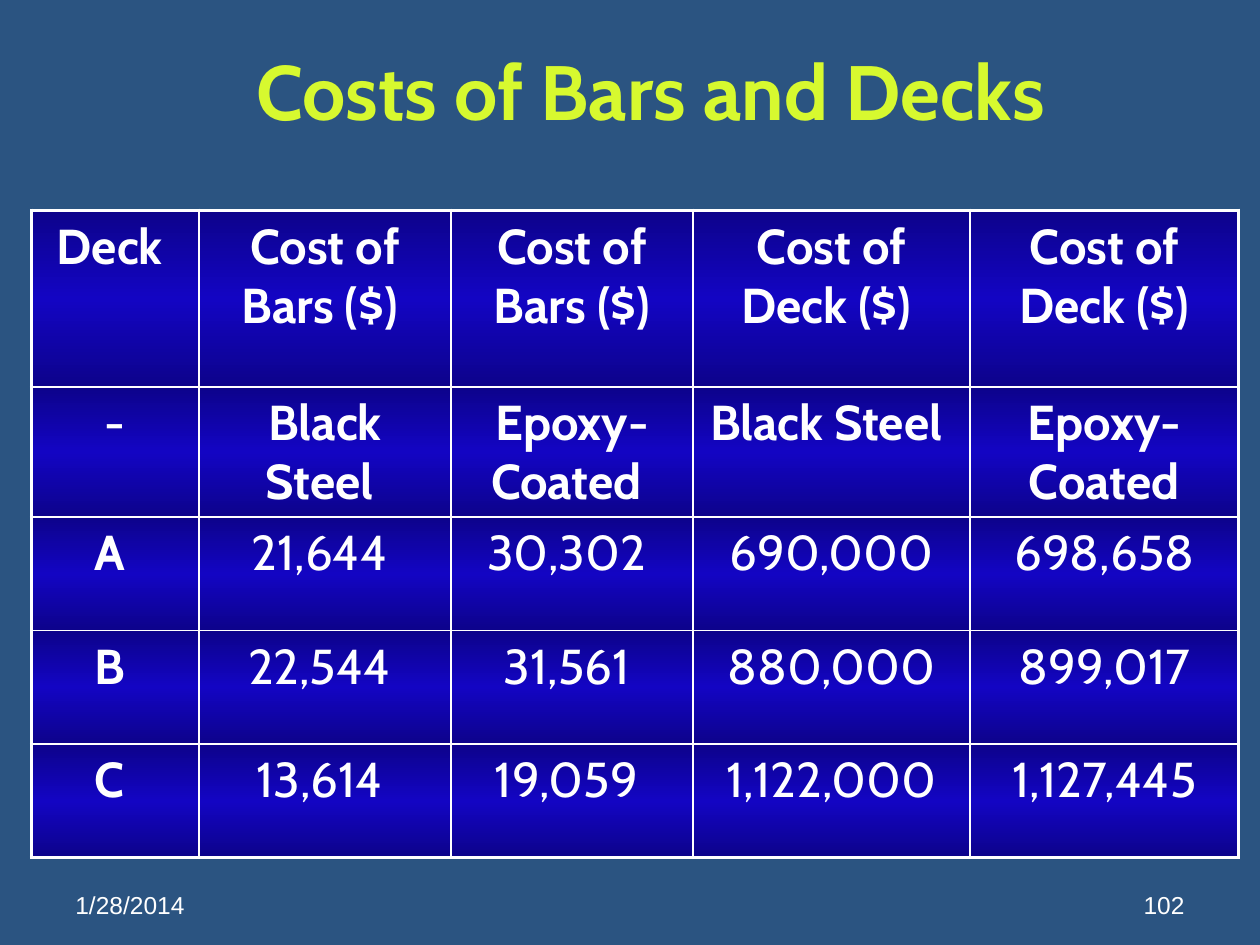
"""Build the slide that compares the costs of bars and decks."""
from dataclasses import dataclass

from pptx import Presentation
from pptx.dml.color import RGBColor
from pptx.enum.text import MSO_ANCHOR as Anchor, PP_ALIGN as Align
from pptx.oxml import parse_xml
from pptx.oxml.ns import nsdecls
from pptx.slide import Slide
from pptx.table import _Cell as Cell
from pptx.text.text import _Paragraph as Paragraph
from pptx.util import Inches, Pt

BACKGROUND = RGBColor(0x2B, 0x54, 0x81)
WHITE = RGBColor(0xFF, 0xFF, 0xFF)
LIME = RGBColor(0xD7, 0xF9, 0x2F)
CELL_BLUE = RGBColor(0x13, 0x05, 0xC3)

TITLE_FONT = {"name": "Cabin", "size": Pt(44), "bold": True}
CELL_FONT = {"name": "Cabin", "size": Pt(28)}
FOOTER_FONT = {"name": "Arial", "size": Pt(14)}

OUTER_BORDER, INNER_BORDER = Pt(2.25), Pt(1)
COLUMN_WIDTHS = (1.33, 2, 1.92, 2.2, 2.13)
ROW_HEIGHTS = (1.4, 1.03, 0.9, 0.9, 0.9)
HEADER_ROWS = 2
COSTS = (
    ("Deck ", "Cost of Bars ($) ", "Cost of Bars ($)", "Cost of Deck ($) ", "Cost of Deck ($)"),
    ("-", "Black Steel ", "Epoxy-Coated ", "Black Steel ", "Epoxy-Coated"),
    ("A ", "21,644 ", "30,302 ", "690,000", "698,658"),
    ("B ", "22,544 ", "31,561 ", "880,000", "899,017"),
    ("C ", "13,614 ", "19,059 ", "1,122,000", "1,127,445"),
)


@dataclass(frozen=True)
class Label:
    """A line of text with its place and format."""
    text: str
    left: float
    top: float
    width: float
    height: float
    font: dict
    color: RGBColor
    align: Align
    anchor: Anchor


LABELS = (
    Label("1/28/2014", 0.5, 6.83, 2.33, 0.52, FOOTER_FONT, WHITE, Align.LEFT, Anchor.BOTTOM),
    Label("102", 7.17, 6.83, 2.33, 0.52, FOOTER_FONT, WHITE, Align.RIGHT, Anchor.BOTTOM),
    Label("Costs of Bars and Decks", 1.08, 0.25, 8.17, 0.92, TITLE_FONT, LIME,
          Align.CENTER, Anchor.MIDDLE),
)


def write_text(paragraph: Paragraph, text: str, font: dict, color: RGBColor, align: Align) -> None:
    """Write one formatted run into a paragraph."""
    paragraph.alignment = align
    run = paragraph.add_run()
    run.text = text
    for name, value in font.items():
        setattr(run.font, name, value)
    run.font.color.rgb = color


def add_label(slide: Slide, label: Label) -> None:
    """Add a text box for a label."""
    box = (label.left, label.top, label.width, label.height)
    frame = slide.shapes.add_textbox(*map(Inches, box)).text_frame
    frame.word_wrap = True
    frame.vertical_anchor = label.anchor
    write_text(frame.paragraphs[0], label.text, label.font, label.color, label.align)


def style_cell(cell: Cell, outer_sides: dict[str, bool]) -> None:
    """Give a cell its borders and its dark-edged gradient."""
    properties = cell._tc.get_or_add_tcPr()
    for side, is_outer in outer_sides.items():
        width = OUTER_BORDER if is_outer else INNER_BORDER
        properties.append(parse_xml(
            f'<a:{side} {nsdecls("a")} w="{width}"><a:solidFill>'
            f'<a:srgbClr val="{WHITE}"/></a:solidFill></a:{side}>'))
    edge = f'<a:srgbClr val="{CELL_BLUE}"><a:shade val="46275"/></a:srgbClr>'
    middle = f'<a:srgbClr val="{CELL_BLUE}"/>'
    stops = "".join(f'<a:gs pos="{position}">{color}</a:gs>'
                    for position, color in ((0, edge), (50000, middle), (100000, edge)))
    properties.append(parse_xml(
        f'<a:gradFill {nsdecls("a")} rotWithShape="0"><a:gsLst>{stops}</a:gsLst>'
        '<a:lin ang="5400000" scaled="1"/></a:gradFill>'))


def add_cost_table(slide: Slide) -> None:
    """Add the table of costs."""
    row_count, column_count = len(ROW_HEIGHTS), len(COLUMN_WIDTHS)
    table = slide.shapes.add_table(
        row_count, column_count, Inches(0.25), Inches(1.67),
        Inches(sum(COLUMN_WIDTHS)), Inches(sum(ROW_HEIGHTS))).table
    table.first_row = table.horz_banding = False
    for column, width in zip(table.columns, COLUMN_WIDTHS):
        column.width = Inches(width)
    for row, height in zip(table.rows, ROW_HEIGHTS):
        row.height = Inches(height)
    for row_index, texts in enumerate(COSTS):
        for column_index, text in enumerate(texts):
            cell = table.cell(row_index, column_index)
            is_heading = row_index < HEADER_ROWS or column_index == 0
            font = CELL_FONT | {"bold": is_heading and text != "-"}
            write_text(cell.text_frame.paragraphs[0], text, font, WHITE, Align.CENTER)
            style_cell(cell, {
                "lnL": column_index == 0,
                "lnR": column_index == column_count - 1,
                "lnT": row_index == 0,
                "lnB": row_index == row_count - 1,
            })


def main() -> None:
    """Build and save the presentation."""
    presentation = Presentation()
    presentation.slide_width, presentation.slide_height = Inches(10), Inches(7.5)
    slide = presentation.slides.add_slide(presentation.slide_layouts[6])
    background = slide.background.fill
    background.solid()
    background.fore_color.rgb = BACKGROUND
    for label in LABELS:
        add_label(slide, label)
    add_cost_table(slide)
    presentation.save("out.pptx")


if __name__ == "__main__":
    main()
